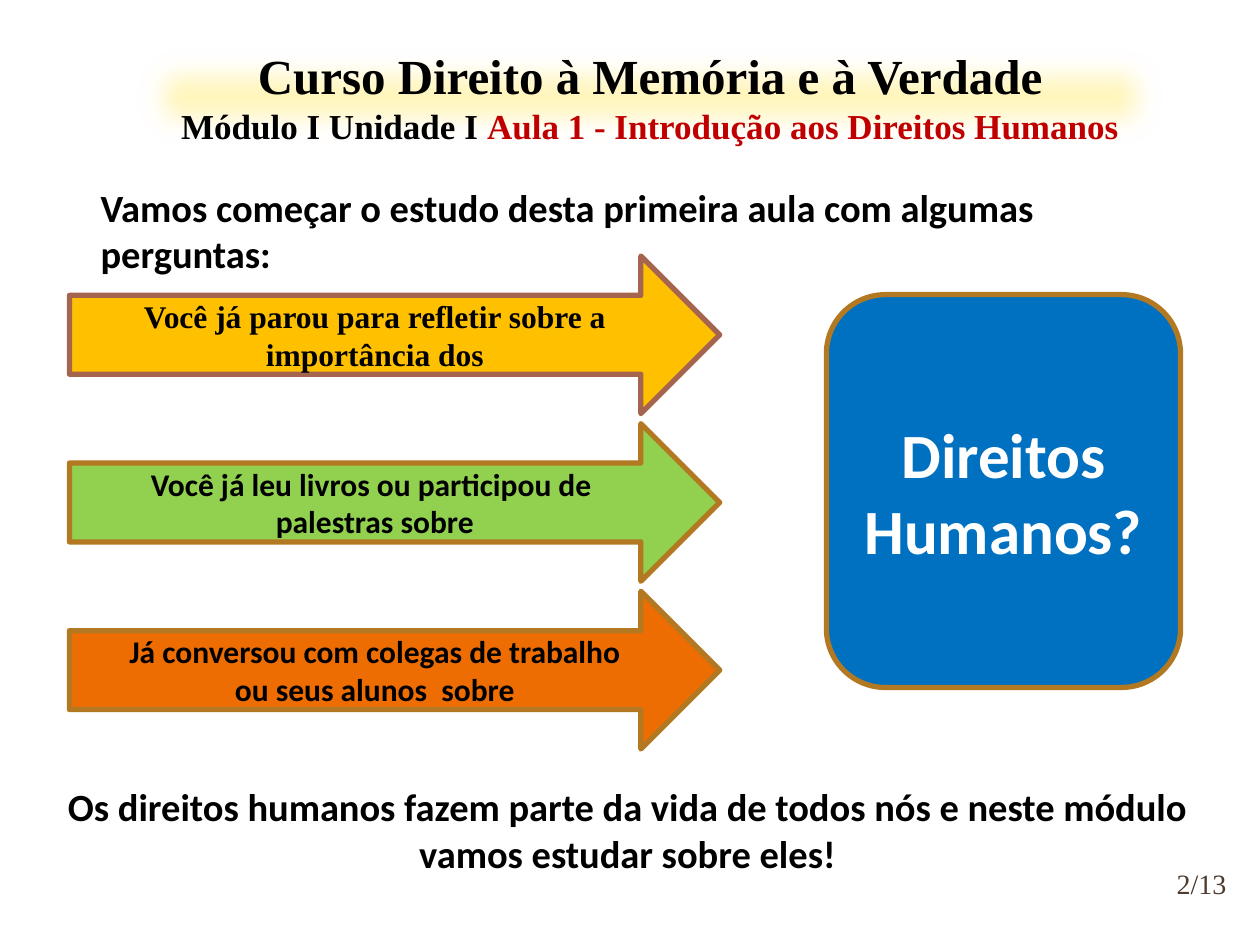
from typing import NamedTuple

from lxml.etree import SubElement
from pptx import Presentation
from pptx.dml.color import RGBColor
from pptx.enum.shapes import MSO_SHAPE as Preset
from pptx.enum.text import MSO_ANCHOR as Anchor, PP_ALIGN as Align
from pptx.oxml.ns import qn
from pptx.util import Cm, Pt

BLACK = RGBColor(0x00, 0x00, 0x00)
WHITE = RGBColor(0xFF, 0xFF, 0xFF)
RED = RGBColor(0xC0, 0x00, 0x00)
BROWN = RGBColor(0x4E, 0x3B, 0x30)
OCHRE = RGBColor(0xB2, 0x78, 0x22)
RUST = RGBColor(0xA5, 0x64, 0x4E)
AMBER = RGBColor(0xFF, 0xC0, 0x00)
GREEN = RGBColor(0x92, 0xD0, 0x50)
ORANGE = RGBColor(0xED, 0x6D, 0x03)
BLUE = RGBColor(0x00, 0x70, 0xC0)
PALE_YELLOW = RGBColor(0xFF, 0xF6, 0xBE)

SANS = "Calibri"
SERIF = "Times New Roman"


class Box(NamedTuple):
    """Left, top, width and height in centimetres."""
    left: float
    top: float
    width: float
    height: float


class Span(NamedTuple):
    text: str
    size: float
    font: str = SANS
    color: RGBColor = BLACK
    bold: bool = True


class Question(NamedTuple):
    lines: list[str]
    fill: RGBColor
    border: RGBColor = OCHRE
    font: str = SANS


def write(frame, paragraphs: list[list[Span]], align=Align.CENTER, anchor=Anchor.TOP) -> None:
    frame.word_wrap = True
    frame.vertical_anchor = anchor
    for index, spans in enumerate(paragraphs):
        paragraph = frame.add_paragraph() if index else frame.paragraphs[0]
        paragraph.alignment = align
        for span in spans:
            run = paragraph.add_run()
            run.text = span.text
            run.font.size = Pt(span.size)
            run.font.name = span.font
            run.font.bold = span.bold
            run.font.color.rgb = span.color


def add_text(slide, box: Box, span: Span, align=Align.CENTER, anchor=Anchor.TOP):
    frame = slide.shapes.add_textbox(*map(Cm, box)).text_frame
    write(frame, [[span]], align, anchor)
    return frame


def add_panel(slide, preset, box: Box, fill: RGBColor, border: RGBColor | None = None):
    panel = slide.shapes.add_shape(preset, *map(Cm, box))
    panel.shadow.inherit = False
    panel.fill.solid()
    panel.fill.fore_color.rgb = fill
    if border is None:
        panel.line.fill.background()
    else:
        panel.line.color.rgb = border
        panel.line.width = Pt(3)
    return panel


def soften_edges(panel, radius: Cm) -> None:
    effects = panel.element.spPr.find(qn("a:effectLst"))
    SubElement(effects, qn("a:softEdge"), rad=str(int(radius)))


QUESTIONS = [
    Question(["Você já parou para refletir sobre a importância dos"], AMBER, RUST, SERIF),
    Question(["Você já leu livros ou participou de ", "palestras sobre"], GREEN),
    Question(["Já conversou com colegas de trabalho", "ou seus alunos  sobre"], ORANGE),
]
FIRST_ARROW = Box(1.4, 5.16, 13.11, 3.18)
ARROW_PITCH = 3.38


def main() -> None:
    deck = Presentation()
    deck.slide_width, deck.slide_height = Cm(25.4), Cm(19.05)
    slide = deck.slides.add_slide(deck.slide_layouts[6])

    # Course title on a soft yellow band
    title = add_panel(slide, Preset.RECTANGLE, Box(2.59, 0.79, 21.03, 2.31), PALE_YELLOW)
    soften_edges(title, Cm(0.6))
    write(title.text_frame, [
        [Span("Curso Direito à Memória e à Verdade", 28, SERIF)],
        [Span("Módulo I Unidade I ", 20, SERIF),
         Span("Aula 1 - Introdução aos Direitos Humanos", 20, SERIF, RED)],
    ])

    # Introduction
    add_text(slide, Box(1.78, 3.58, 21.03, 2.13),
             Span("Vamos começar o estudo desta primeira aula com algumas perguntas:", 22),
             Align.LEFT)

    # Questions pointing to the topic
    for row, question in enumerate(QUESTIONS):
        place = FIRST_ARROW._replace(top=FIRST_ARROW.top + row * ARROW_PITCH)
        arrow = add_panel(slide, Preset.RIGHT_ARROW, place, question.fill, question.border)
        write(arrow.text_frame,
              [[Span(line, 18, question.font)] for line in question.lines],
              anchor=Anchor.MIDDLE)

    # Topic
    topic = add_panel(slide, Preset.ROUNDED_RECTANGLE, Box(16.66, 5.94, 7.14, 7.92), BLUE, OCHRE)
    write(topic.text_frame, [[Span("Direitos Humanos?", 36, color=WHITE)]], anchor=Anchor.MIDDLE)

    # Closing sentence
    add_text(slide, Box(0.99, 15.67, 23.32, 2.13),
             Span("Os direitos humanos fazem parte da vida de todos nós e neste módulo "
                  "vamos estudar sobre eles!", 22))

    # Page number
    page = add_text(slide, Box(23.37, 17.17, 1.7, 1.27),
                    Span("2/13", 16, SERIF, BROWN, False), anchor=Anchor.MIDDLE)
    page.margin_left = page.margin_right = page.margin_top = page.margin_bottom = Cm(0)

    deck.save("out.pptx")


if __name__ == "__main__":
    main()
